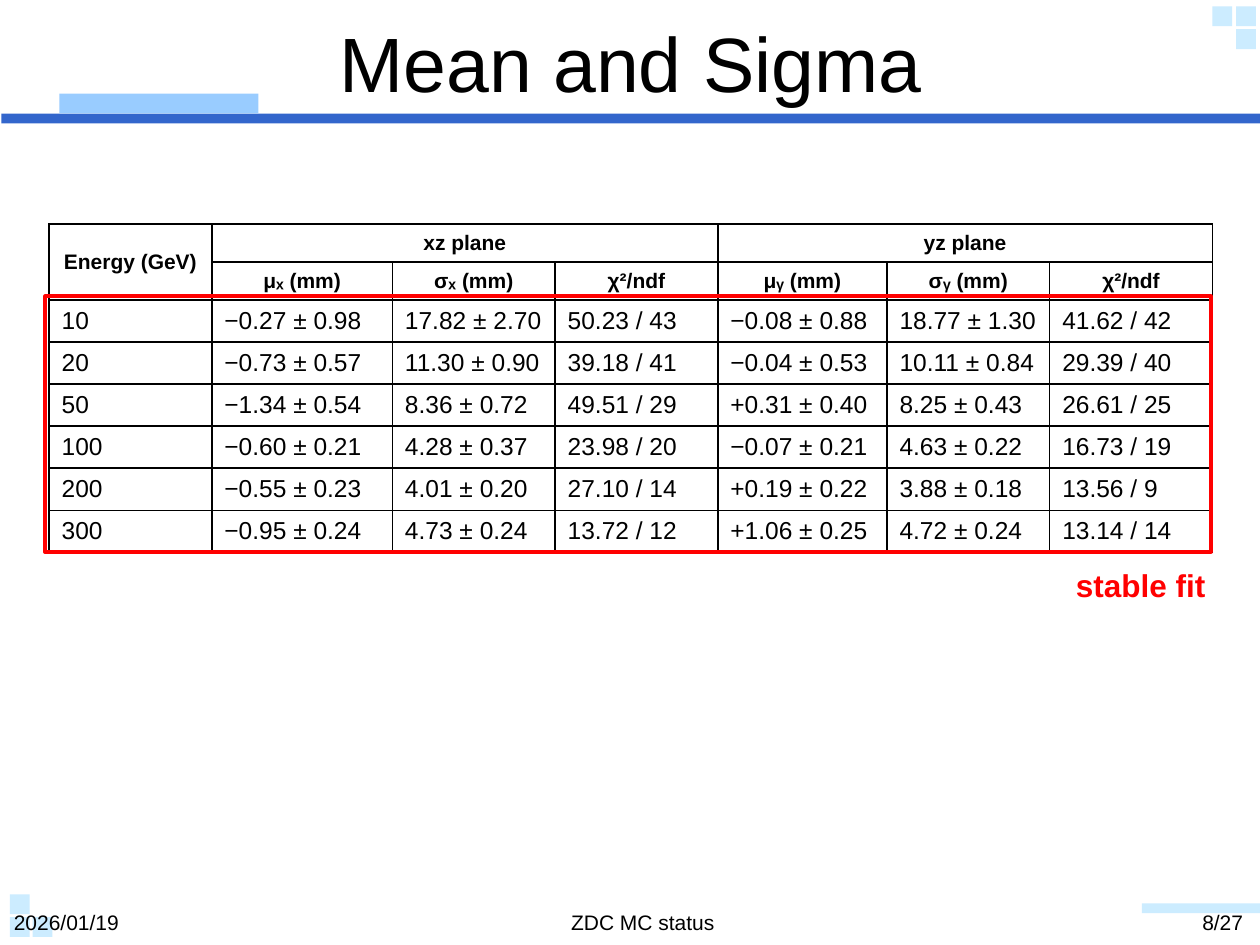
from dataclasses import dataclass

from lxml.etree import SubElement
from pptx import Presentation
from pptx.dml.color import RGBColor
from pptx.enum.shapes import MSO_SHAPE as Preset
from pptx.enum.text import MSO_ANCHOR as Anchor, PP_ALIGN as Align
from pptx.oxml.ns import qn
from pptx.util import Cm, Pt


@dataclass(frozen=True)
class Theme:
    """Colours, font and type sizes of the slide."""
    font: str = "Arial"
    ink: str = "000000"
    alert: str = "FF0000"
    rule: str = "3366CC"
    tab: str = "99CCFF"
    pale: str = "CCECFF"
    title: int = 44
    note: int = 18
    body: int = 14
    small: int = 12


THEME = Theme()
COLUMN_WIDTHS = (3.28, 3.64, 3.28, 3.28, 3.41, 3.28, 3.28)
HEADER_HEIGHT, BODY_HEIGHT = 0.74, 0.82
PLANES = ("xz plane", "yz plane")
QUANTITIES = ("μₓ (mm)", "σₓ (mm)", "χ²/ndf", "μᵧ (mm)", "σᵧ (mm)", "χ²/ndf")
FITS = (
    ("10", "−0.27 ± 0.98", "17.82 ± 2.70", "50.23 / 43",
     "−0.08 ± 0.88", "18.77 ± 1.30", "41.62 / 42"),
    ("20", "−0.73 ± 0.57", "11.30 ± 0.90", "39.18 / 41",
     "−0.04 ± 0.53", "10.11 ± 0.84", "29.39 / 40"),
    ("50", "−1.34 ± 0.54", "8.36 ± 0.72", "49.51 / 29",
     "+0.31 ± 0.40", "8.25 ± 0.43", "26.61 / 25"),
    ("100", "−0.60 ± 0.21", "4.28 ± 0.37", "23.98 / 20",
     "−0.07 ± 0.21", "4.63 ± 0.22", "16.73 / 19"),
    ("200", "−0.55 ± 0.23", "4.01 ± 0.20", "27.10 / 14",
     "+0.19 ± 0.22", "3.88 ± 0.18", "13.56 / 9"),
    ("300", "−0.95 ± 0.24", "4.73 ± 0.24", "13.72 / 12",
     "+1.06 ± 0.25", "4.72 ± 0.24", "13.14 / 14"),
)


def write(frame, text, size, color=THEME.ink, bold=False, align=Align.LEFT):
    """Write one formatted run into the first paragraph of a text frame."""
    paragraph = frame.paragraphs[0]
    paragraph.alignment = align
    run = paragraph.add_run()
    run.text = text
    run.font.name, run.font.size, run.font.bold = THEME.font, Pt(size), bold
    run.font.color.rgb = RGBColor.from_string(color)


def add_label(slide, box, text, size, **style):
    """Place a text box with a single line of text."""
    label = slide.shapes.add_textbox(*map(Cm, box))
    label.text_frame.word_wrap = True
    write(label.text_frame, text, size, **style)


def add_block(slide, box, color):
    """Place a plain filled rectangle."""
    block = slide.shapes.add_shape(Preset.RECTANGLE, *map(Cm, box))
    block.shadow.inherit = False
    block.fill.solid()
    block.fill.fore_color.rgb = RGBColor.from_string(color)
    block.line.fill.background()


def add_corner_squares(slide, box, empty):
    """Fill a two by two grid of squares, leaving one place empty."""
    left, top, width, height = box
    side = 0.4
    for row in range(2):
        for column in range(2):
            if (row, column) != empty:
                add_block(slide, (left + column * (width - side),
                                  top + row * (height - side), side, side), THEME.pale)


def add_header(slide, box):
    """Place the title with its rule, tab and corner squares."""
    left, top, width, height = box
    title = slide.shapes.title
    title.left, title.top, title.width, title.height = map(Cm, box)
    title.text_frame.vertical_anchor = Anchor.MIDDLE
    write(title.text_frame, "Mean and Sigma", THEME.title, align=Align.CENTER)
    add_block(slide, (left, top + 2.16, width, 0.2), THEME.rule)
    add_block(slide, (left + 1.17, top + 1.76, 4.01, 0.4), THEME.tab)
    add_corner_squares(slide, (left + 24.41, top, 0.88, 0.86), empty=(1, 0))


def add_footer(slide, box):
    """Place the date, talk name and page number with their decoration."""
    left, top, width, height = box
    add_corner_squares(slide, (left + 0.17, top - 0.18, 0.86, 0.86), empty=(0, 1))
    add_block(slide, (left + width - 2.38, top, 2.38, 0.2), THEME.pale)
    parts = (("2026/01/19", 5.08, Align.LEFT), ("ZDC MC status", 15.7, Align.CENTER),
             ("8/27", 4.5, Align.RIGHT))
    for text, part_width, align in parts:
        add_label(slide, (left, top, part_width, height), text, THEME.small, align=align)
        left += part_width


def draw_borders(cell):
    """Give a cell four thin black edges and no fill."""
    properties = cell._tc.get_or_add_tcPr()
    for edge in ("a:lnL", "a:lnR", "a:lnT", "a:lnB"):
        line = SubElement(properties, qn(edge), w=str(Pt(1)))
        SubElement(SubElement(line, qn("a:solidFill")), qn("a:srgbClr"), val=THEME.ink)
    cell.fill.background()


def add_fit_table(slide, left, top):
    """Place the table of fit results under its two header rows."""
    heights = [HEADER_HEIGHT] * 2 + [BODY_HEIGHT] * len(FITS)
    table = slide.shapes.add_table(len(heights), len(COLUMN_WIDTHS), Cm(left), Cm(top),
                                   Cm(sum(COLUMN_WIDTHS)), Cm(sum(heights))).table
    table.first_row = table.horz_banding = False
    for column, width in zip(table.columns, COLUMN_WIDTHS):
        column.width = Cm(width)
    for row, height in zip(table.rows, heights):
        row.height = Cm(height)
    for cell in table.iter_cells():
        cell.vertical_anchor = Anchor.MIDDLE
        draw_borders(cell)

    headings = {(0, 0): "Energy (GeV)"}
    table.cell(0, 0).merge(table.cell(1, 0))
    for plane, first in zip(PLANES, (1, 4)):
        table.cell(0, first).merge(table.cell(0, first + 2))
        headings[0, first] = plane
    headings.update({(1, column): name for column, name in enumerate(QUANTITIES, 1)})
    for place, heading in headings.items():
        write(table.cell(*place).text_frame, heading, THEME.small,
              bold=True, align=Align.CENTER)
    for row, fit in enumerate(FITS, 2):
        for column, value in enumerate(fit):
            write(table.cell(row, column).text_frame, value, THEME.body)


def add_stable_region(slide, box):
    """Frame the fit results in red and name them below the frame."""
    left, top, width, height = box
    frame = slide.shapes.add_shape(Preset.RECTANGLE, *map(Cm, box))
    frame.shadow.inherit = False
    frame.fill.background()
    frame.line.color.rgb = RGBColor.from_string(THEME.alert)
    frame.line.width = Pt(2)
    add_label(slide, (left + width - 2.97, top + height + 0.15, 3.99, 1.02),
              "stable fit", THEME.note, color=THEME.alert, bold=True)


def main():
    """Build the slide and save it."""
    deck = Presentation()
    deck.slide_width, deck.slide_height = Cm(25.4), Cm(19.05)
    slide = deck.slides.add_slide(deck.slide_layouts[5])
    add_header(slide, (0.03, 0.13, 25.37, 2.21))
    add_footer(slide, (0.03, 18.21, 25.37, 0.84))
    add_fit_table(slide, 0.99, 4.52)
    add_stable_region(slide, (0.91, 5.97, 23.5, 5.16))
    deck.save("out.pptx")


if __name__ == "__main__":
    main()
